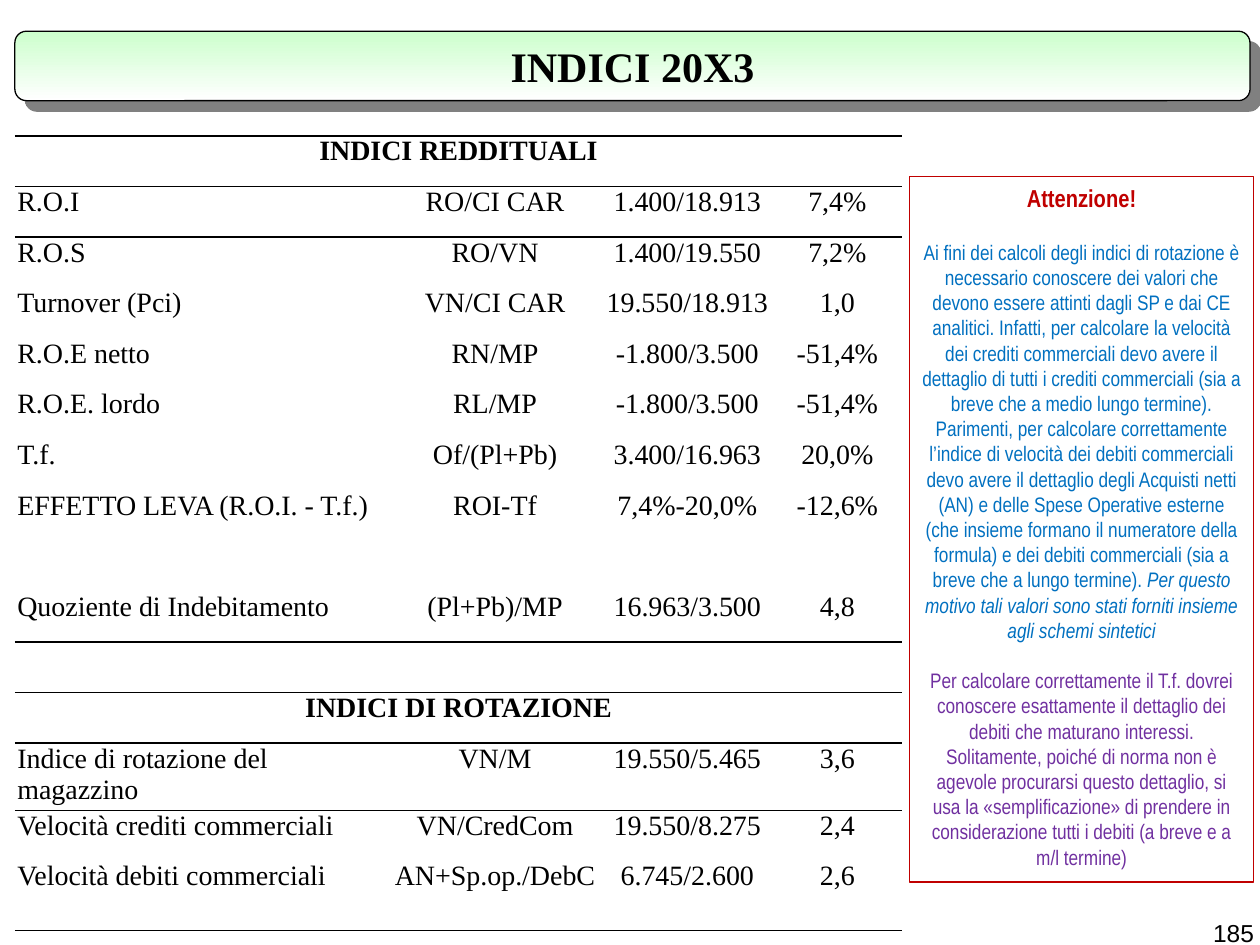
from lxml import etree
from pptx import Presentation
from pptx.dml.color import RGBColor
from pptx.enum.shapes import MSO_SHAPE
from pptx.enum.text import MSO_ANCHOR, PP_ALIGN
from pptx.oxml.ns import qn
from pptx.util import Cm, Pt

LEFT, CENTER, RIGHT = PP_ALIGN.LEFT, PP_ALIGN.CENTER, PP_ALIGN.RIGHT
MIDDLE, TOP = MSO_ANCHOR.MIDDLE, MSO_ANCHOR.TOP
BLACK = RGBColor(0x00, 0x00, 0x00)
WHITE = RGBColor(0xFF, 0xFF, 0xFF)
GREEN = RGBColor(0xCC, 0xFF, 0xCC)
GREY = RGBColor(0x80, 0x80, 0x80)
RED = RGBColor(0xC0, 0x00, 0x00)
BLUE = RGBColor(0x00, 0x70, 0xC0)
PURPLE = RGBColor(0x70, 0x30, 0xA0)
SERIF, SANS, NARROW = "Times New Roman", "Arial", "Arial Narrow"
NO_STYLE = "{2D5ABB26-0587-4C30-8999-92F81FD0307C}"

TITLE = "INDICI 20X3"
PAGE = "185"
ROWS = [
    ("INDICI REDDITUALI",),
    ("R.O.I", "RO/CI CAR", "1.400/18.913", "7,4%"),
    ("R.O.S", "RO/VN", "1.400/19.550", "7,2%"),
    ("Turnover (Pci)", "VN/CI CAR", "19.550/18.913", "1,0"),
    ("R.O.E netto", "RN/MP", "-1.800/3.500", "-51,4%"),
    ("R.O.E. lordo", "RL/MP", "-1.800/3.500", "-51,4%"),
    ("T.f.", "Of/(Pl+Pb)", "3.400/16.963", "20,0%"),
    ("EFFETTO LEVA (R.O.I. - T.f.)", "ROI-Tf", "7,4%-20,0%", "-12,6%"),
    (),
    ("Quoziente di Indebitamento", "(Pl+Pb)/MP", "16.963/3.500", "4,8"),
    (),
    ("INDICI DI ROTAZIONE",),
    ("Indice di rotazione del magazzino", "VN/M", "19.550/5.465", "3,6"),
    ("Velocità crediti commerciali", "VN/CredCom", "19.550/8.275", "2,4"),
    ("Velocità debiti commerciali", "AN+Sp.op./DebC", "6.745/2.600", "2,6"),
]
COL_WIDTHS = [7.52, 4.32, 0.74, 2.69, 2.62]
ROW_HEIGHT, LAST_HEIGHT = 1.02, 1.4
TEXT_COLS = (0, 1, 2, 4)
RULED_EDGES = {0, 1, 10, 11, 12, 15}

NOTE = [
    (15.5, [("Attenzione!", dict(size=Pt(14), bold=True), RED)]),
    (14.4, [
        ("Ai fini dei calcoli degli indici di rotazione è necessario conoscere dei valori "
         "che devono essere attinti dagli SP e dai CE analitici. Infatti, per calcolare la "
         "velocità dei crediti commerciali devo avere il dettaglio di tutti i crediti "
         "commerciali (sia a breve che a medio lungo termine). Parimenti, per calcolare "
         "correttamente l’indice di velocità dei debiti commerciali devo avere il dettaglio "
         "degli Acquisti netti (AN) e delle Spese Operative esterne (che insieme formano il "
         "numeratore della formula) e dei debiti commerciali (sia a breve che a lungo "
         "termine). ", dict(size=Pt(12)), BLUE),
        ("Per questo motivo tali valori sono stati forniti insieme agli schemi sintetici",
         dict(size=Pt(12), italic=True), BLUE),
    ]),
    (0, [
        ("Per calcolare correttamente il T.f. dovrei conoscere esattamente il dettaglio dei "
         "debiti che maturano interessi. Solitamente, poiché di norma non è agevole "
         "procurarsi questo dettaglio, si usa la «semplificazione» di prendere in "
         "considerazione tutti i debiti (a breve e a m/l termine)",
         dict(size=Pt(12)), PURPLE),
    ]),
]


def add_run(p, text, font, color, align):
    p.alignment = align
    r = p.add_run()
    r.text = text
    for name, value in font.items():
        setattr(r.font, name, value)
    r.font.color.rgb = color


def set_color(parent, color):
    etree.SubElement(parent, qn("a:srgbClr"), val=str(color))


def add_shadow(sp):
    effects = sp._element.spPr.find(qn("a:effectLst"))
    shadow = etree.SubElement(effects, qn("a:outerShdw"), blurRad="0",
                              dist=str(Pt(8.5)), dir="2700000",
                              algn="ctr", rotWithShape="0")
    set_color(shadow, GREY)


def add_border(cell, side):
    ln = etree.SubElement(cell._tc.get_or_add_tcPr(), qn(f"a:{side}"), w=str(Pt(1)))
    set_color(etree.SubElement(ln, qn("a:solidFill")), BLACK)


def add_title(s):
    box = Cm(0.3), Cm(0.63), Cm(24.9), Cm(1.4)
    sp = s.shapes.add_shape(MSO_SHAPE.ROUNDED_RECTANGLE, *box)
    sp.shadow.inherit = False
    sp.fill.gradient()
    sp.fill.gradient_angle = 270
    for stop, color, pos in zip(sp.fill.gradient_stops, (GREEN, WHITE), (0, 1)):
        stop.color.rgb = color
        stop.position = pos
    sp.line.color.rgb = BLACK
    sp.line.width = Pt(0.75)
    add_shadow(sp)

    title = s.shapes.title
    title.left, title.top, title.width, title.height = box
    s.shapes._spTree.append(title._element)
    tf = title.text_frame
    tf.vertical_anchor = MIDDLE
    tf.word_wrap = True
    add_run(tf.paragraphs[0], TITLE, dict(size=Pt(24), bold=True, name=SERIF), BLACK, CENTER)


def add_indices(s):
    heights = [ROW_HEIGHT] * (len(ROWS) - 1) + [LAST_HEIGHT]
    frame = s.shapes.add_table(len(ROWS), len(COL_WIDTHS), Cm(0.3), Cm(2.74),
                               Cm(sum(COL_WIDTHS)), Cm(sum(heights)))
    table = frame.table
    table.first_row = table.horz_banding = False
    table._tbl.tblPr.find(qn("a:tableStyleId")).text = NO_STYLE
    for col, width in zip(table.columns, COL_WIDTHS):
        col.width = Cm(width)
    cell_format = dict(margin_left=Cm(0.05), margin_right=Cm(0.05), margin_top=0,
                       margin_bottom=0, vertical_anchor=TOP)
    for i, (texts, height) in enumerate(zip(ROWS, heights)):
        table.rows[i].height = Cm(height)
        for cell in table.rows[i].cells:
            for name, value in cell_format.items():
                setattr(cell, name, value)
            for side, edge in (("lnT", i), ("lnB", i + 1)):
                if edge in RULED_EDGES:
                    add_border(cell, side)
            cell.fill.background()
        header = len(texts) == 1
        if texts:
            first, last = (0, 4) if header else (2, 3)
            table.cell(i, first).merge(table.cell(i, last))
        for j, text in zip(TEXT_COLS, texts):
            align = CENTER if header or j else LEFT
            add_run(table.cell(i, j).text_frame.paragraphs[0], text,
                    dict(size=Pt(16), bold=header, name=SERIF), BLACK, align)


def add_note(s):
    sp = s.shapes.add_shape(MSO_SHAPE.RECTANGLE, Cm(18.34), Cm(3.56), Cm(6.93), Cm(14.22))
    sp.shadow.inherit = False
    sp.fill.background()
    sp.line.color.rgb = RED
    sp.line.width = Pt(0.75)
    tf = sp.text_frame
    tf.word_wrap = True
    tf.vertical_anchor = TOP
    for i, (gap, runs) in enumerate(NOTE):
        p = tf.add_paragraph() if i else tf.paragraphs[0]
        p.space_after = Pt(gap)
        for text, font, color in runs:
            add_run(p, text, dict(font, name=NARROW), color, CENTER)


def add_page_number(s):
    tf = s.shapes.add_textbox(Cm(19.61), Cm(18.39), Cm(5.92), Cm(1.32)).text_frame
    tf.word_wrap = True
    add_run(tf.paragraphs[0], PAGE, dict(size=Pt(14), name=SANS), BLACK, RIGHT)


def main():
    prs = Presentation()
    prs.slide_width, prs.slide_height = Cm(25.4), Cm(19.05)
    s = prs.slides.add_slide(prs.slide_layouts[5])
    add_title(s)
    add_page_number(s)
    add_indices(s)
    add_note(s)
    prs.save("out.pptx")


if __name__ == "__main__":
    main()
